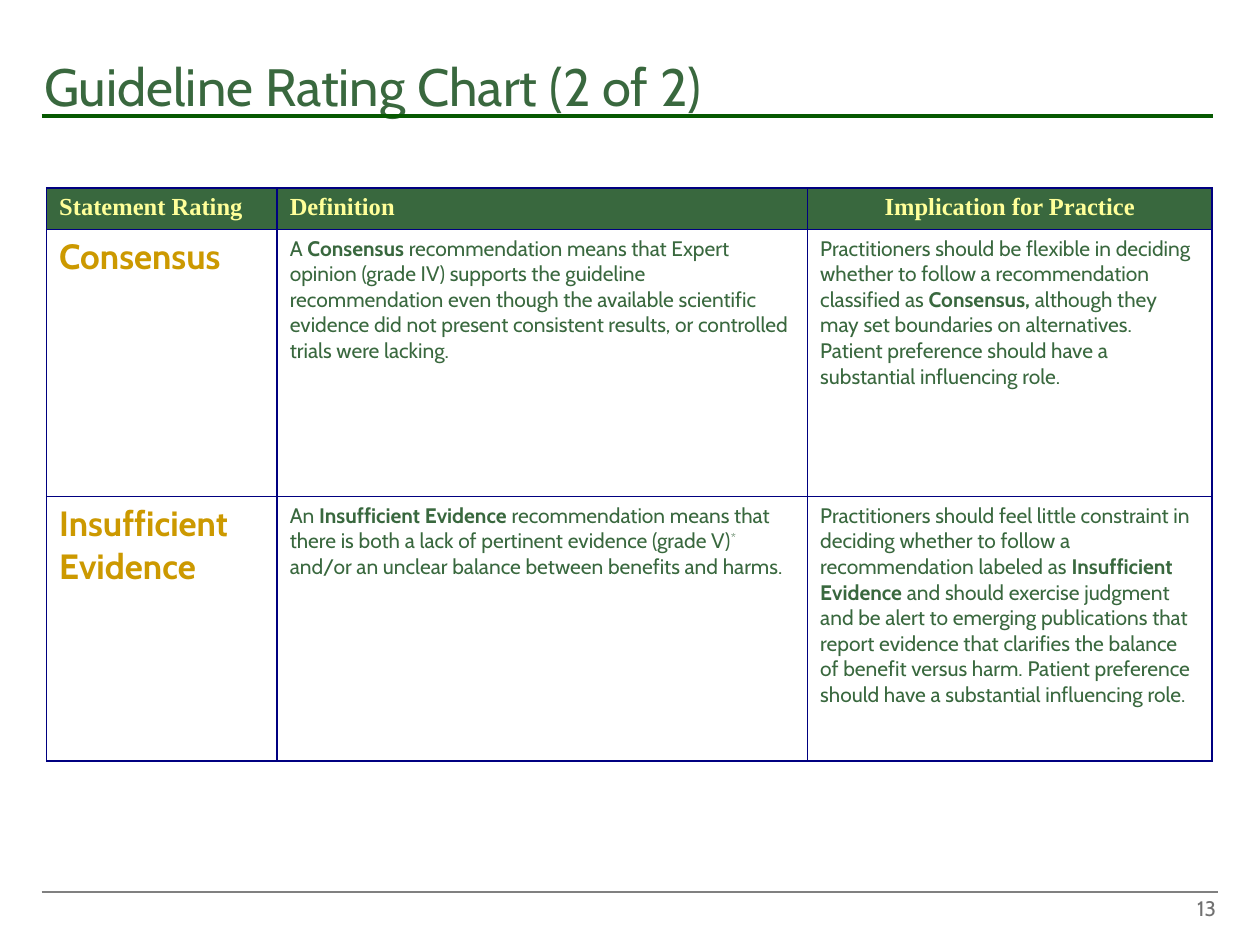
from pptx import Presentation
from pptx import util as u
from pptx.dml.color import RGBColor
from pptx.enum import shapes, text
from pptx.oxml import parse_xml
from pptx.oxml.ns import nsdecls

TITLE = "Guideline Rating Chart (2 of 2)"
PAGE_NUMBER = "13"
HEADERS = ["Statement Rating", "Definition", "Implication for Practice"]
RATINGS = [
    ("Consensus",
     [("A ", ""), ("Consensus ", "bold"),
      ("recommendation means that Expert opinion (grade IV) supports the guideline "
       "recommendation even though the available scientific evidence did not present "
       "consistent results, or controlled trials were lacking.", "")],
     [("Practitioners should be flexible in deciding whether to follow a "
       "recommendation classified as ", ""), ("Consensus,", "bold"),
      (" although they may set boundaries on alternatives. Patient preference "
       "should have a substantial influencing role.", "")]),
    ("Insufficient Evidence",
     [("An", ""), (" Insufficient Evidence ", "bold"),
      ("recommendation means that there is both a lack of pertinent evidence "
       "(grade V)", ""), ("*", "superscript"),
      (" and/or an unclear balance between benefits and harms.", "")],
     [("Practitioners should feel little constraint in deciding whether to follow a "
       "recommendation labeled as", ""), (" Insufficient Evidence ", "bold"),
      ("and should exercise judgment and be alert to emerging publications that "
       "report evidence that clarifies the balance of benefit versus harm. Patient "
       "preference should have a substantial influencing role.", "")]),
]
COLUMN_WIDTHS = [1.83, 4.21, 3.21]
ROW_HEIGHTS = [0.33, 2.12, 2.1]
RULES = [(0.92, 9.63, "065901", 2.25), (7.08, 9.67, "808080", 1)]
THEME = {
    "font": "Cabin", "header_font": "Times New Roman",
    "green": "39683E", "gold": "CC9900", "cream": "FFFF99",
    "white": "FFFFFF", "navy": "000080", "gray": "717171",
    "title": 30, "rating": 20, "header": 14, "body": 12,
}


def style(font, size, color, name=THEME["font"], bold=False):
    font.size, font.name, font.bold = u.Pt(size), name, bold
    font.color.rgb = RGBColor.from_string(color)


def add_rule(slide, top, right, color, width):
    rule = slide.shapes.add_connector(
        shapes.MSO_CONNECTOR.STRAIGHT,
        u.Inches(0.33), u.Inches(top), u.Inches(right), u.Inches(top))
    rule.line.color.rgb = RGBColor.from_string(color)
    rule.line.width = u.Pt(width)
    rule._element.spPr.append(parse_xml(f"<a:effectLst {nsdecls('a')}/>"))


def place(shape, left, top, width, height):
    shape.left, shape.top = u.Inches(left), u.Inches(top)
    shape.width, shape.height = u.Inches(width), u.Inches(height)


def add_borders(cell):
    properties = cell._tc.get_or_add_tcPr()
    for index, side in enumerate(["lnL", "lnR", "lnT", "lnB"]):
        properties.insert(index, parse_xml(
            f'<a:{side} {nsdecls("a")} w="{u.Pt(1)}"><a:solidFill>'
            f'<a:srgbClr val="{THEME["navy"]}"/></a:solidFill></a:{side}>'))


def fill_cell(cell, runs, fill, **font):
    cell.fill.solid()
    cell.fill.fore_color.rgb = RGBColor.from_string(fill)
    add_borders(cell)
    paragraph = cell.text_frame.paragraphs[0]
    for content, emphasis in runs:
        run = paragraph.add_run()
        run.text = content
        style(run.font, bold=emphasis == "bold", **font)
        if emphasis == "superscript":
            run._r.get_or_add_rPr().set("baseline", "30000")


def add_rating_table(slide):
    frame = slide.shapes.add_table(
        len(ROW_HEIGHTS), len(COLUMN_WIDTHS), u.Inches(0.37), u.Inches(1.49),
        u.Inches(sum(COLUMN_WIDTHS)), u.Inches(sum(ROW_HEIGHTS)))
    table = frame.table
    for column, width in zip(table.columns, COLUMN_WIDTHS):
        column.width = u.Inches(width)
    for row, height in zip(table.rows, ROW_HEIGHTS):
        row.height = u.Inches(height)
    for index, header in enumerate(HEADERS):
        fill_cell(table.cell(0, index), [(header, "bold")], THEME["green"],
                  size=THEME["header"], color=THEME["cream"], name=THEME["header_font"])
    table.cell(0, 2).text_frame.paragraphs[0].alignment = text.PP_ALIGN.CENTER
    for row, (rating, *details) in enumerate(RATINGS, start=1):
        fill_cell(table.cell(row, 0), [(rating, "bold")], THEME["white"],
                  size=THEME["rating"], color=THEME["gold"])
        for column, runs in enumerate(details, start=1):
            fill_cell(table.cell(row, column), runs, THEME["white"],
                      size=THEME["body"], color=THEME["green"])


def write_line(shape, content, size, color, anchor, alignment):
    frame = shape.text_frame
    frame.word_wrap = True
    frame.auto_size = text.MSO_AUTO_SIZE.NONE
    frame.vertical_anchor = anchor
    frame.text = content
    paragraph = frame.paragraphs[0]
    paragraph.alignment = alignment
    style(paragraph.runs[0].font, size, color)


def main():
    presentation = Presentation()
    presentation.slide_width, presentation.slide_height = u.Inches(10), u.Inches(7.5)
    slide = presentation.slides.add_slide(presentation.slide_layouts[5])
    for rule in RULES:
        add_rule(slide, *rule)
    add_rating_table(slide)
    title = slide.shapes.title
    place(title, 0.25, 0.38, 9, 0.62)
    write_line(title, TITLE, THEME["title"], THEME["green"],
               text.MSO_ANCHOR.TOP, text.PP_ALIGN.LEFT)
    number = slide.shapes.add_textbox(0, 0, 0, 0)
    place(number, 7.42, 7.08, 2.33, 0.25)
    write_line(number, PAGE_NUMBER, THEME["body"], THEME["gray"],
               text.MSO_ANCHOR.MIDDLE, text.PP_ALIGN.RIGHT)
    presentation.save("out.pptx")


if __name__ == "__main__":
    main()
